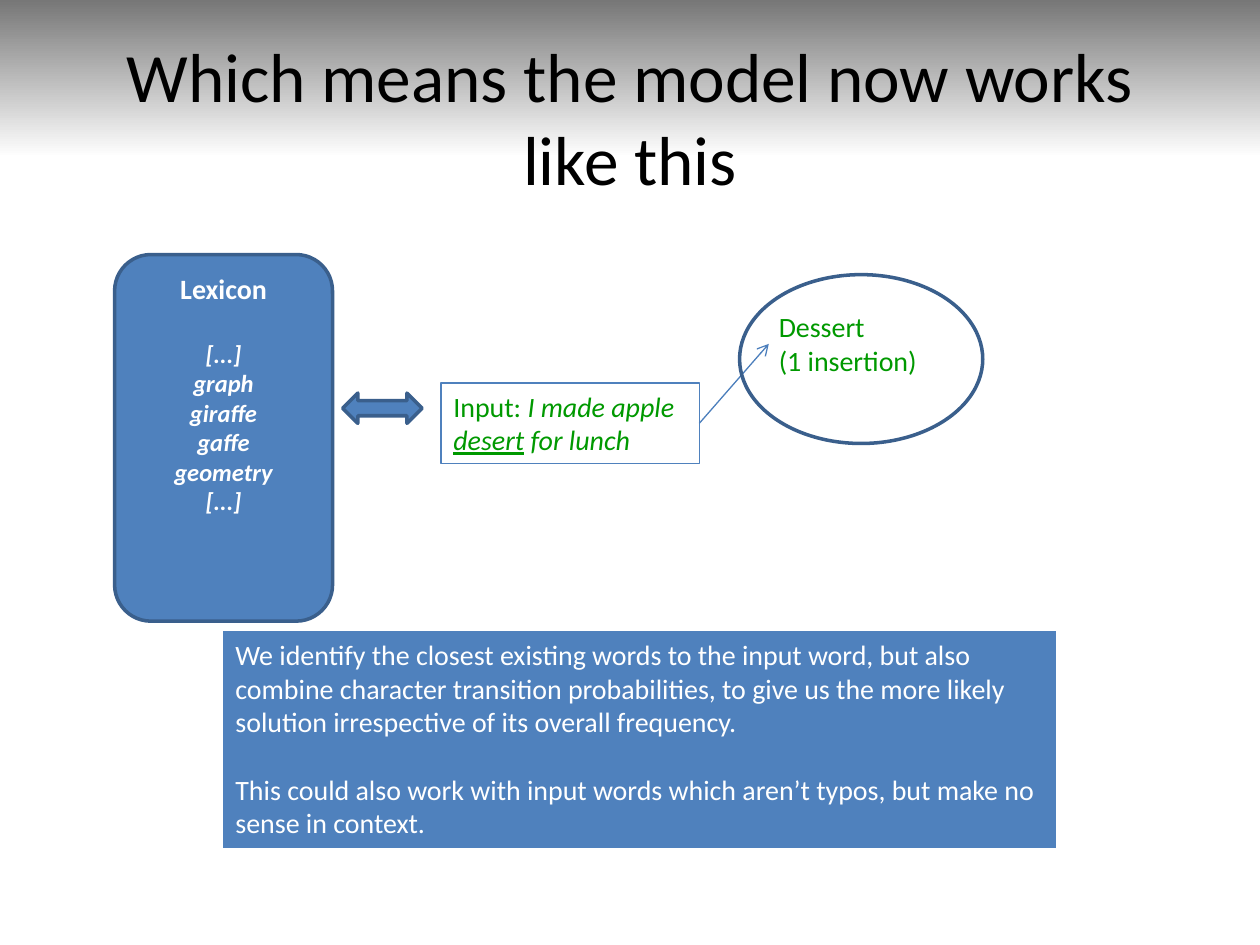
from collections import namedtuple

from lxml import etree
from pptx import Presentation
from pptx.dml.color import RGBColor
from pptx.enum.shapes import MSO_CONNECTOR, MSO_SHAPE
from pptx.enum.text import MSO_ANCHOR, PP_ALIGN
from pptx.oxml.ns import qn
from pptx.util import Inches, Pt

RECTANGLE, ROUNDED = MSO_SHAPE.RECTANGLE, MSO_SHAPE.ROUNDED_RECTANGLE
OVAL, DOUBLE_ARROW = MSO_SHAPE.OVAL, MSO_SHAPE.LEFT_RIGHT_ARROW
STRAIGHT = MSO_CONNECTOR.STRAIGHT
LEFT, CENTER = PP_ALIGN.LEFT, PP_ALIGN.CENTER
TOP, MIDDLE = MSO_ANCHOR.TOP, MSO_ANCHOR.MIDDLE

COLORS = {
    "blue": "4F81BD",
    "outline": "3A5F8C",
    "arrow": "4B7EBC",
    "green": "009900",
    "white": "FFFFFF",
    "black": "000000",
    "gray": "777777",
}
FONT = "Calibri"
CELL = Inches(0.1)
COLUMNS, ROWS = 100, 75
RIGHT_SIDE = 3
BLANK_LINE = Pt(19.5)

Box = namedtuple("Box", "left top width height")


def color(name):
    return RGBColor.from_string(COLORS[name])


def cells(*counts):
    return [round(count * CELL) for count in counts]


def within(box, left, top, width, height):
    return Box(box.left + left * box.width, box.top + top * box.height,
               width * box.width, height * box.height)


def add_block(page, kind, box, fill=None, line=None, weight=2):
    shape = page.shapes.add_shape(kind, *cells(*box))
    shape.shadow.inherit = False
    if fill:
        shape.fill.solid()
        shape.fill.fore_color.rgb = color(fill)
    else:
        shape.fill.background()
    if line:
        shape.line.color.rgb = color(line)
        shape.line.width = Pt(weight)
    else:
        shape.line.fill.background()
    return shape


def write(shape, lines, ink, size=16, align=LEFT, anchor=TOP, wrap=True):
    frame = shape.text_frame
    frame.text = "\n".join(lines)
    frame.word_wrap = wrap
    frame.vertical_anchor = anchor
    for para in frame.paragraphs:
        para.alignment = align
        for span in para.runs:
            style(span, ink, size)
    return frame.paragraphs


def style(span, ink, size=16):
    span.font.name = FONT
    span.font.size = Pt(size)
    span.font.color.rgb = color(ink)


def add_header(page, box):
    band = add_block(page, RECTANGLE, box)
    band.fill.gradient()
    band.fill.gradient_angle = 270
    for stop, name, position in zip(band.fill.gradient_stops, ("gray", "white"), (0, 1)):
        stop.color.rgb = color(name)
        stop.position = position
    title = page.shapes.add_textbox(*cells(*within(box, 0.05, 0.24, 0.9, 1)))
    write(title, ["Which means the model now works like this"], "black", 39.6, CENTER, MIDDLE)


def add_lexicon(page, box):
    card = add_block(page, ROUNDED, box, "blue", "outline")
    words = ["[...]", "graph", "giraffe", "gaffe", "geometry", "[...]"]
    heading, *entries = write(card, ["Lexicon"] + words, "white", align=CENTER)
    heading.space_after = BLANK_LINE
    heading.runs[0].font.bold = True
    for para in entries:
        font = para.runs[0].font
        font.size, font.bold, font.italic = Pt(14), True, True


def add_input(page, box):
    card = add_block(page, RECTANGLE, box, line="blue", weight=0.75)
    para = write(card, ["Input: "], "green")[0]
    for text, underlined in (("I made apple ", False), ("desert", True), (" for lunch", False)):
        span = para.add_run()
        span.text = text
        style(span, "green")
        span.font.italic, span.font.underline = True, underlined
    return card


def add_result(page, box, source):
    end_x, end_y = cells(box.left + 0.12 * box.width, box.top + 0.41 * box.height)
    link = page.shapes.add_connector(STRAIGHT, 0, 0, end_x, end_y)
    link.begin_connect(source, RIGHT_SIDE)
    link.line.color.rgb = color("arrow")
    link.line.width = Pt(0.75)
    outline = link.line._get_or_add_ln()
    etree.SubElement(outline, qn("a:tailEnd"), type="arrow")
    etree.SubElement(outline.getparent(), qn("a:effectLst"))
    label = page.shapes.add_textbox(*cells(*within(box, 0.11, 0.17, 0.68, 0.48)))
    write(label, ["Dessert", "(1 insertion)"], "green", wrap=False)
    add_block(page, OVAL, box, line="outline")


def add_explanation(page, box):
    panel = add_block(page, RECTANGLE, box, "blue")
    paras = write(panel, [
        "We identify the closest existing words to the input word, but also combine "
        "character transition probabilities, to give us the more likely solution "
        "irrespective of its overall frequency.",
        "This could also work with input words which aren’t typos, but make no sense in context.",
    ], "white")
    paras[0].space_after = BLANK_LINE


def main():
    deck = Presentation()
    deck.slide_width, deck.slide_height = cells(COLUMNS, ROWS)
    page = deck.slides.add_slide(deck.slide_layouts[6])
    add_header(page, Box(0, 0, COLUMNS, ROWS / 6))
    add_lexicon(page, Box(9.1, 20.2, 17.3, 29.1))
    source = add_input(page, Box(35, 30.4, 20.5, 6.4))
    add_block(page, DOUBLE_ARROW, Box(27.2, 31.2, 6.3, 2.4), "blue", "outline")
    add_result(page, Box(58.7, 21.8, 19.3, 13.4), source)
    add_explanation(page, Box(17.7, 50.1, 66.1, 17.2))
    deck.save("out.pptx")


if __name__ == "__main__":
    main()
